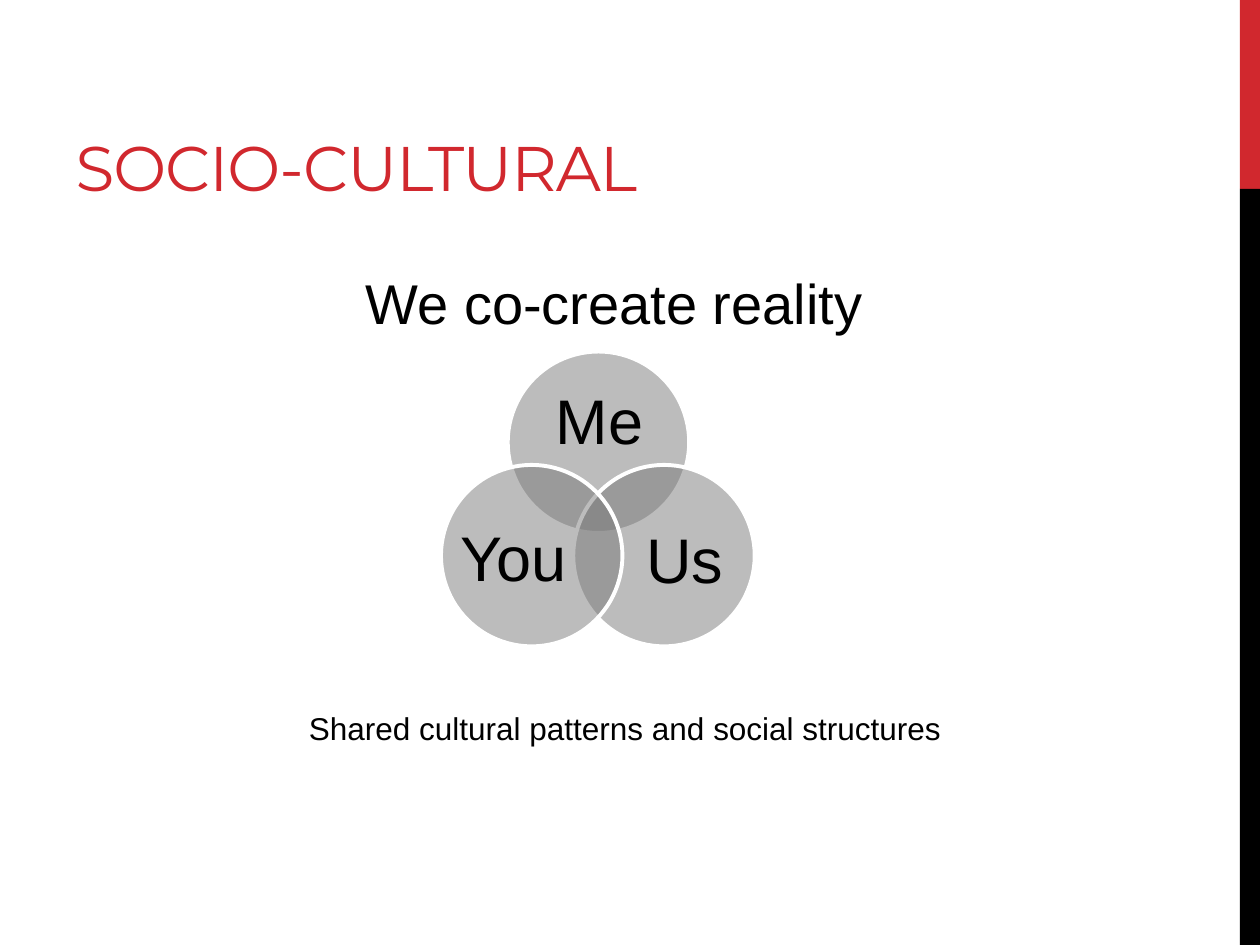
"""Build the socio-cultural slide with its three overlapping circles."""
import pptx
import pptx.dml.color
import pptx.enum.shapes
import pptx.enum.text
import pptx.oxml
import pptx.oxml.ns
import pptx.util

Inches = pptx.util.Inches
Pt = pptx.util.Pt
RGBColor = pptx.dml.color.RGBColor
MSO_SHAPE = pptx.enum.shapes.MSO_SHAPE
MSO_ANCHOR = pptx.enum.text.MSO_ANCHOR
PP_ALIGN = pptx.enum.text.PP_ALIGN

RED = RGBColor(0xD1, 0x28, 0x2E)
BLACK = RGBColor(0, 0, 0)
GRAY = RGBColor(0x7A, 0x7A, 0x7A)
WHITE = RGBColor(0xFF, 0xFF, 0xFF)

CIRCLE_SIZE = 1.44
CIRCLES = [
    ((4.03, 2.79), "Me", (4.23, 3.04, 1.06, 0.65)),
    ((4.55, 3.69), "Us", (5, 4.07, 0.87, 0.79)),
    ((3.5, 3.69), "You", (3.64, 4.06, 0.87, 0.79)),
]


def write_text(shape, text, size, font="Arial", color=BLACK,
               align=PP_ALIGN.CENTER, anchor=MSO_ANCHOR.TOP,
               line_spacing=None, margin=None, tracking=None):
    frame = shape.text_frame
    frame.word_wrap = True
    frame.auto_size = pptx.enum.text.MSO_AUTO_SIZE.NONE
    frame.vertical_anchor = anchor
    if margin is not None:
        frame.margin_left = frame.margin_right = Inches(margin)
        frame.margin_top = frame.margin_bottom = Inches(margin)
    paragraph = frame.paragraphs[0]
    paragraph.alignment = align
    if line_spacing is not None:
        paragraph.line_spacing = line_spacing
    run = paragraph.add_run()
    run.text = text
    run.font.size = Pt(size)
    run.font.name = font
    run.font.color.rgb = color
    if tracking is not None:
        run.font._element.set("spc", str(round(tracking * 100)))


def add_title(slide, text):
    title = slide.shapes.title
    title.left, title.top = Inches(0.5), Inches(0.17)
    title.width, title.height = Inches(6.33), Inches(1.5)
    write_text(title, text, 36, font="Montserrat", color=RED,
               align=PP_ALIGN.LEFT, anchor=MSO_ANCHOR.BOTTOM, tracking=-0.6)


def add_text(shapes, text, box, size, **text_format):
    shape = shapes.add_textbox(*map(Inches, box))
    write_text(shape, text, size, **text_format)


def add_filled_shape(shapes, kind, box, color):
    shape = shapes.add_shape(kind, *map(Inches, box))
    shape.shadow.inherit = False
    shape.fill.solid()
    shape.fill.fore_color.rgb = color
    shape.line.fill.background()
    return shape


def add_circle(shapes, left, top):
    box = (left, top, CIRCLE_SIZE, CIRCLE_SIZE)
    circle = add_filled_shape(shapes, MSO_SHAPE.OVAL, box, GRAY)
    color = circle._element.spPr.find(".//" + pptx.oxml.ns.qn("a:srgbClr"))
    alpha = pptx.oxml.parse_xml(
        f'<a:alpha {pptx.oxml.ns.nsdecls("a")} val="50000"/>')
    color.append(alpha)
    circle.line.color.rgb = WHITE
    circle.line.width = Pt(2.25)


def add_circles(slide):
    group = slide.shapes.add_group_shape()
    for position, label, label_box in CIRCLES:
        add_circle(group.shapes, *position)
        add_text(group.shapes, label, label_box, 36,
                 anchor=MSO_ANCHOR.MIDDLE, line_spacing=0.9, margin=0)


def main():
    presentation = pptx.Presentation()
    presentation.slide_width = Inches(10)
    presentation.slide_height = Inches(7.5)
    slide = presentation.slides.add_slide(presentation.slide_layouts[5])
    for top, height, color in ((0, 1.5, RED), (1.5, 6, BLACK)):
        add_filled_shape(slide.shapes, MSO_SHAPE.RECTANGLE,
                         (9.84, top, 0.16, height), color)
    add_title(slide, "SOCIO-CULTURAL")
    add_circles(slide)
    add_text(slide.shapes, "Shared cultural patterns and social structures",
             (1.5, 5.58, 6.92, 0.4), 18)
    add_text(slide.shapes, "We co-create reality", (2.5, 2.08, 4.75, 0.64), 32)
    presentation.save("out.pptx")


if __name__ == "__main__":
    main()
